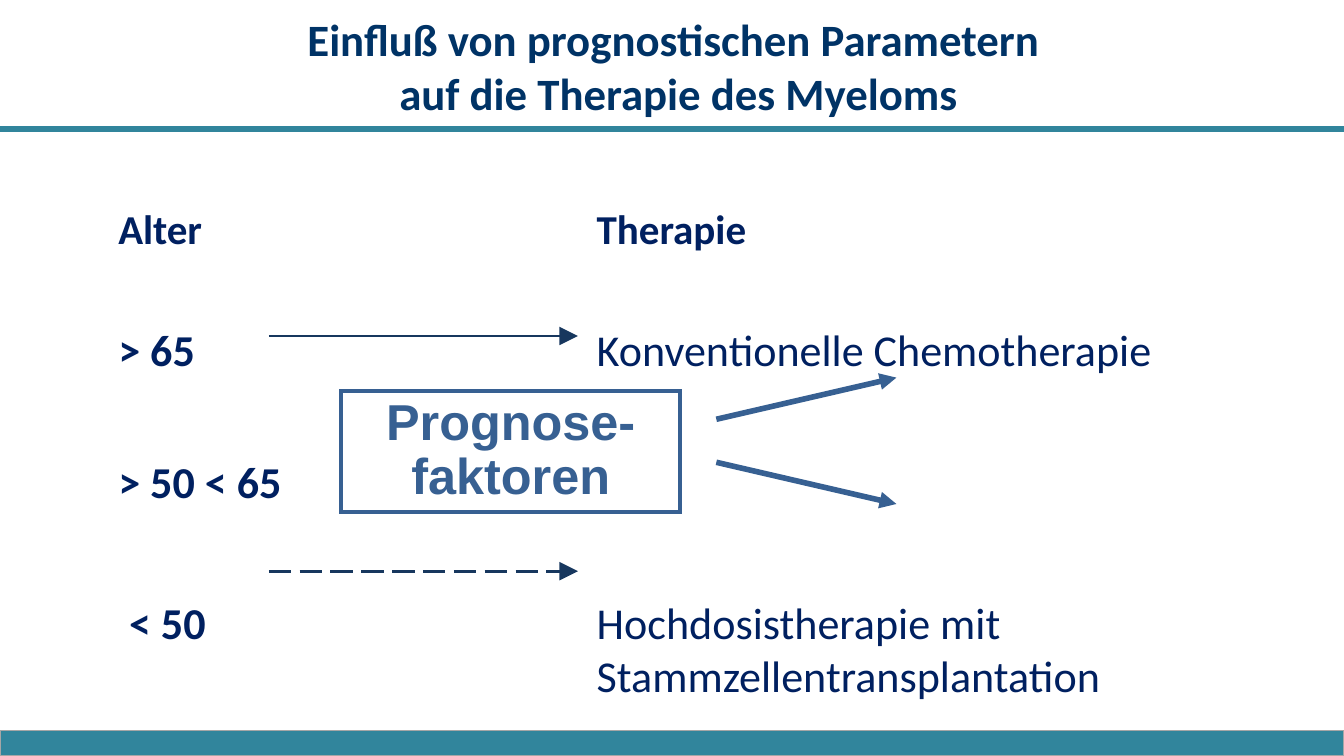
from lxml.etree import SubElement
from pptx import Presentation
from pptx.dml.color import RGBColor
from pptx.enum.dml import MSO_LINE
from pptx.enum.shapes import MSO_CONNECTOR, MSO_SHAPE
from pptx.enum.text import MSO_ANCHOR, MSO_AUTO_SIZE, PP_ALIGN
from pptx.oxml.ns import qn
from pptx.util import Inches, Pt

COLORS = {
    "teal": "31859C",
    "grey": "A6A6A6",
    "title": "003366",
    "text": "002060",
    "arrow": "17375E",
    "factor": "376092",
    "white": "FFFFFF",
}
SLIDE_W = 10
SLIDE_H = SLIDE_W * 9 / 16
TAB = 3.56

# age, therapy, space before (pt), first-line shift (in), size (pt), bold therapy
ROWS = [
    ("Alter", "Therapie", 0, 0, 22, True),
    ("> 65", "Konventionelle Chemotherapie", 37.5, 0, 23.6, False),
    ("> 50 < 65", "", 42.5, 0, 23.6, False),
    ("< 50", "Hochdosistherapie mit\vStammzellentransplantation",
     47, 0.08, 23.6, False),
]


def rgb(name):
    return RGBColor.from_string(COLORS[name])


def place(sp, x, y, w, h):
    sp.left, sp.top, sp.width, sp.height = map(Inches, (x, y, w, h))


def add_text(p, text, size, color, font="Calibri", bold=True):
    """Append text to a paragraph; a vertical tab becomes a line break."""
    for i, line in enumerate(text.split("\v")):
        if i:
            p.add_line_break()
        r = p.add_run()
        r.text = line
        r.font.name, r.font.size, r.font.bold = font, Pt(size), bold
        r.font.color.rgb = rgb(color)


def set_margins(tf, side, end):
    tf.margin_left = tf.margin_right = Inches(side)
    tf.margin_top = tf.margin_bottom = Inches(end)


def add_box(s, x, y, w, h, fill, line, width):
    sp = s.shapes.add_shape(MSO_SHAPE.RECTANGLE, *map(Inches, (x, y, w, h)))
    sp.shadow.inherit = False
    sp.fill.solid()
    sp.fill.fore_color.rgb = rgb(fill)
    sp.line.color.rgb = rgb(line)
    sp.line.width = Pt(width)
    SubElement(sp.line._get_or_add_ln(), qn("a:miter"), lim="800000")
    return sp


def add_line(s, x1, y1, x2, y2, color, width, head=None, dash=None):
    """Straight line; head is the arrowhead size, such as med or lg."""
    c = s.shapes.add_connector(MSO_CONNECTOR.STRAIGHT,
                               *map(Inches, (x1, y1, x2, y2)))
    c.line.color.rgb = rgb(color)
    c.line.width = Pt(width)
    if dash:
        c.line.dash_style = dash
    if head:
        SubElement(c.line._get_or_add_ln(), qn("a:tailEnd"),
                   type="triangle", w=head, len=head)
    SubElement(c._element.spPr, qn("a:effectLst"))


def add_frame(s):
    """Rule under the title and bar along the bottom edge."""
    bar = 0.19
    add_box(s, 0, SLIDE_H - bar, SLIDE_W, bar, "teal", "grey", 0.75)
    add_line(s, 0, 0.96, SLIDE_W, 0.96, "teal", 3)


def fill_title(sp, x, y, w, h):
    place(sp, x, y, w, h)
    tf = sp.text_frame
    tf.auto_size = MSO_AUTO_SIZE.NONE
    tf.vertical_anchor = MSO_ANCHOR.MIDDLE
    p = tf.paragraphs[0]
    p.alignment = PP_ALIGN.CENTER
    add_text(p, "Einfluß von prognostischen Parametern\v"
                " auf die Therapie des Myeloms", 24, "title")


def fill_body(sp, x, y, w, h):
    """Two columns, age and therapy, set with a tab and a hanging indent."""
    place(sp, x, y, w, h)
    tf = sp.text_frame
    tf.auto_size = MSO_AUTO_SIZE.NONE
    tf.vertical_anchor = MSO_ANCHOR.TOP
    set_margins(tf, 0.13, 0.07)
    for i, (age, therapy, before, shift, size, bold) in enumerate(ROWS):
        p = tf.add_paragraph() if i else tf.paragraphs[0]
        p.space_before = Pt(before)
        pPr = p._p.get_or_add_pPr()
        pPr.set("marL", str(Inches(TAB)))
        pPr.set("indent", str(Inches(shift - TAB)))
        SubElement(pPr, qn("a:buNone"))
        tabs = SubElement(pPr, qn("a:tabLst"))
        SubElement(tabs, qn("a:tab"), pos=str(Inches(TAB)), algn="l")
        add_text(p, age, size, "text")
        if therapy:
            add_text(p, "\t" + therapy, size, "text", bold=bold)


def add_factors(s, x, y, w, h):
    """Box of prognostic factors with two arrows fanning out to its right."""
    sp = add_box(s, x, y, w, h, "white", "factor", 2.25)
    tf = sp.text_frame
    tf.word_wrap = True
    tf.vertical_anchor = MSO_ANCHOR.TOP
    set_margins(tf, 0.08, 0.04)
    p = tf.paragraphs[0]
    p.alignment = PP_ALIGN.CENTER
    p.line_spacing = 0.9
    add_text(p, "Prognose-faktoren", 27, "factor", font="Arial")
    start, middle = x + w + 0.27, y + 0.37
    for side in (-1, 1):
        add_line(s, start, middle + side * 0.16,
                 start + 1.34, middle + side * 0.47, "factor", 3, head="med")


def add_age_arrows(s, x, w):
    for y, dash in ((2.5, None), (4.25, MSO_LINE.LONG_DASH)):
        add_line(s, x, y, x + w, y, "arrow", 1.5, head="lg", dash=dash)


def main():
    prs = Presentation()
    prs.slide_width, prs.slide_height = Inches(SLIDE_W), Inches(SLIDE_H)
    s = prs.slides.add_slide(prs.slide_layouts[1])
    add_frame(s)
    fill_title(s.shapes.title, 0.76, 0.02, 8.5, 0.94)
    fill_body(s.placeholders[1], 0.75, 1.44, 9.25, 3.88)
    add_factors(s, 2.54, 2.91, 2.52, 0.9)
    add_age_arrows(s, 2, 2.3)
    prs.save("out.pptx")


if __name__ == "__main__":
    main()
